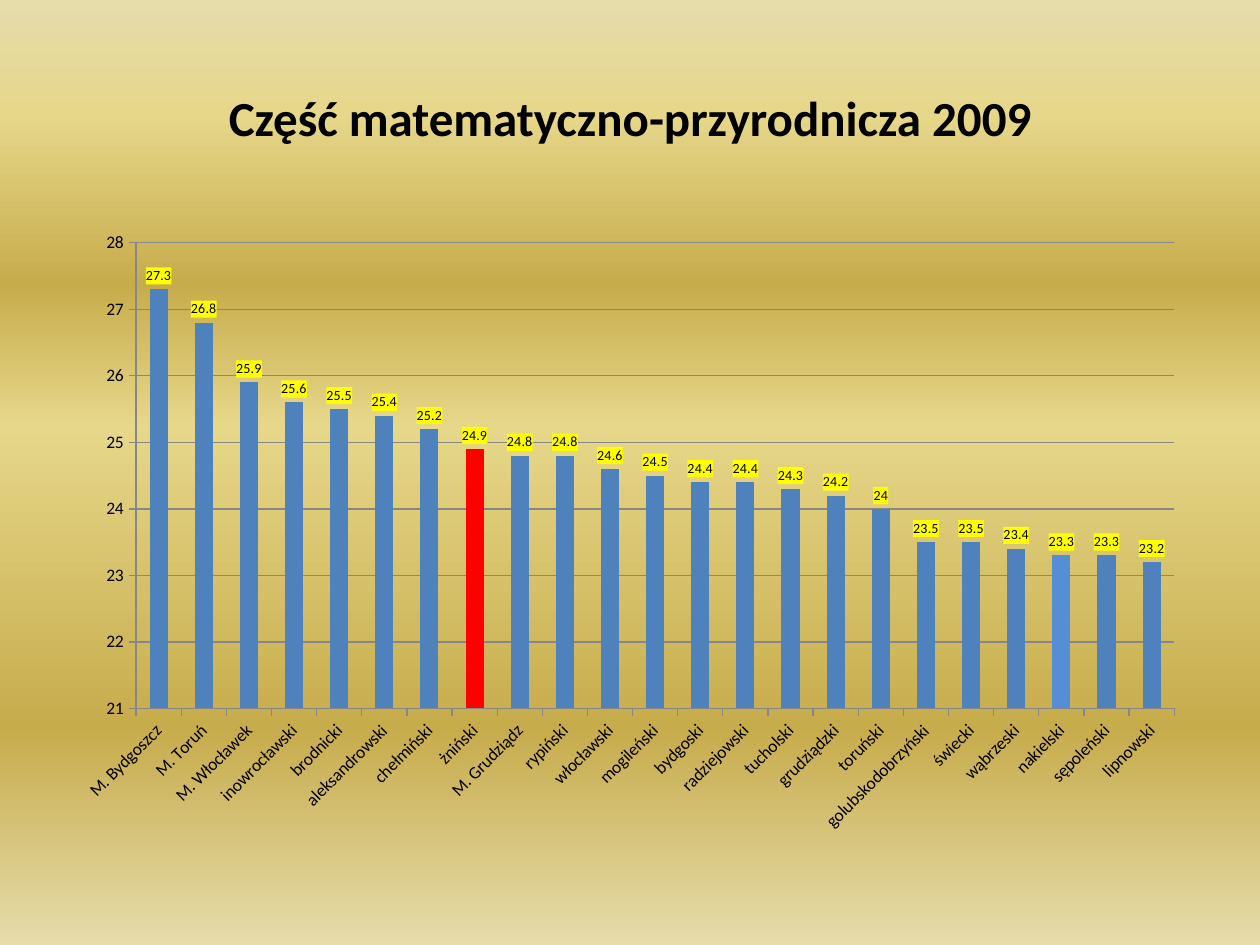
from dataclasses import dataclass

from lxml import etree
from pptx import Presentation
from pptx.chart.data import CategoryChartData
from pptx.dml.color import RGBColor
from pptx.enum.chart import XL_CHART_TYPE, XL_LABEL_POSITION, XL_TICK_MARK
from pptx.enum.text import MSO_ANCHOR, PP_ALIGN
from pptx.oxml import parse_xml
from pptx.oxml.ns import nsdecls, qn
from pptx.util import Inches, Pt

COLUMNS = XL_CHART_TYPE.COLUMN_CLUSTERED
ABOVE = XL_LABEL_POSITION.OUTSIDE_END
CROSS = XL_TICK_MARK.CROSS
OUTSIDE = XL_TICK_MARK.OUTSIDE
MIDDLE = MSO_ANCHOR.MIDDLE
CENTER = PP_ALIGN.CENTER

TITLE = "Część matematyczno-przyrodnicza 2009"
SCORES = {
    "M. Bydgoszcz": 27.3, "M. Toruń": 26.8, "M. Włocławek": 25.9,
    "inowrocławski": 25.6, "brodnicki": 25.5, "aleksandrowski": 25.4,
    "chełmiński": 25.2, "żniński": 24.9, "M. Grudziądz": 24.8,
    "rypiński": 24.8, "włocławski": 24.6, "mogileński": 24.5,
    "bydgoski": 24.4, "radziejowski": 24.4, "tucholski": 24.3,
    "grudziądzki": 24.2, "toruński": 24, "golubskodobrzyński": 23.5,
    "świecki": 23.5, "wąbrzeski": 23.4, "nakielski": 23.3,
    "sępoleński": 23.3, "lipnowski": 23.2,
}


@dataclass(frozen=True)
class Theme:
    font: str = "Calibri"
    title_size: int = 28
    axis_size: int = 10
    label_size: int = 8
    text: str = "000000"
    bar: str = "4F81BD"
    featured: str = "FF0000"
    secondary: str = "558ED5"
    line: str = "878787"
    label_fill: str = "FFFF00"
    backdrop: tuple = (
        (0, "E6DCAC"), (12, "E6D78A"), (30, "C7AC4C"),
        (45, "E6D78A"), (77, "C7AC4C"), (100, "E6DCAC"),
    )


class PageBuilder:
    def __init__(self, deck, theme):
        self.deck = deck
        self.theme = theme
        self.page = deck.slides.add_slide(deck.slide_layouts[5])

    def frame(self, left, top, width, height):
        across, down = self.deck.slide_width, self.deck.slide_height
        return (round(left * across), round(top * down),
                round(width * across), round(height * down))

    def style_font(self, font, size, bold=False):
        font.name = self.theme.font
        font.size = Pt(size)
        font.bold = bold
        font.color.rgb = RGBColor.from_string(self.theme.text)

    def paint(self, fill, color):
        fill.solid()
        fill.fore_color.rgb = RGBColor.from_string(color)

    def background(self):
        fill = self.page.background.fill
        fill.gradient()
        fill.gradient_angle = 270
        stops = next(self.page.element.iter(qn("a:gsLst")))
        for stop in list(stops):
            stops.remove(stop)
        for percent, color in self.theme.backdrop:
            stop = etree.SubElement(stops, qn("a:gs"), pos=str(percent * 1000))
            etree.SubElement(stop, qn("a:srgbClr"), val=color)

    def title(self, text, *shares):
        box = self.page.shapes.title
        box.left, box.top, box.width, box.height = self.frame(*shares)
        box.text_frame.vertical_anchor = MIDDLE
        para = box.text_frame.paragraphs[0]
        para.alignment = CENTER
        span = para.add_run()
        span.text = text
        self.style_font(span.font, self.theme.title_size, bold=True)

    def axis(self, axis, tick):
        axis.major_tick_mark = tick
        axis.minor_tick_mark = XL_TICK_MARK.NONE
        axis.format.line.color.rgb = RGBColor.from_string(self.theme.line)
        self.style_font(axis.tick_labels.font, self.theme.axis_size)

    def value_labels(self, plot):
        plot.has_data_labels = True
        labels = plot.data_labels
        labels.show_value = True
        labels.position = ABOVE
        self.style_font(labels.font, self.theme.label_size)
        fill = parse_xml(
            f'<c:spPr {nsdecls("c", "a")}><a:solidFill>'
            f'<a:srgbClr val="{self.theme.label_fill}"/>'
            f'</a:solidFill></c:spPr>'
        )
        next(plot._element.iter(qn("c:dLbls"))).find(qn("c:txPr")).addprevious(fill)

    def column_chart(self, scores, highlights, *shares):
        data = CategoryChartData()
        data.categories = list(scores)
        data.add_series("Series 1", list(scores.values()))
        chart = self.page.shapes.add_chart(COLUMNS, *self.frame(*shares), data).chart
        chart.has_title = False
        chart.has_legend = False
        self.style_font(chart.font, self.theme.axis_size)

        self.axis(chart.category_axis, OUTSIDE)
        label_body = next(chart.category_axis._element.iter(qn("a:bodyPr")))
        label_body.set("rot", str(-45 * 60000))
        label_body.set("vert", "horz")

        values = chart.value_axis
        self.axis(values, OUTSIDE)
        values.minimum_scale, values.maximum_scale, values.major_unit = 21, 28, 1
        values.has_major_gridlines = True
        grid_line = values.major_gridlines.format.line
        grid_line.color.rgb = RGBColor.from_string(self.theme.line)

        plot = chart.plots[0]
        plot.gap_width = 150
        plot.vary_by_categories = False
        series = plot.series[0]
        self.paint(series.format.fill, self.theme.bar)
        names = list(scores)
        for name, color in highlights.items():
            self.paint(series.points[names.index(name)].format.fill, color)
        self.value_labels(plot)


def main():
    deck = Presentation()
    deck.slide_width, deck.slide_height = Inches(10), Inches(7.5)
    theme = Theme()
    builder = PageBuilder(deck, theme)
    builder.background()
    builder.title(TITLE, 0.05, 0.04, 0.9, 1 / 6)
    highlights = {"żniński": theme.featured, "nakielski": theme.secondary}
    builder.column_chart(SCORES, highlights, 0.05, 7 / 30, 0.9, 0.66)
    deck.save("out.pptx")


if __name__ == "__main__":
    main()
